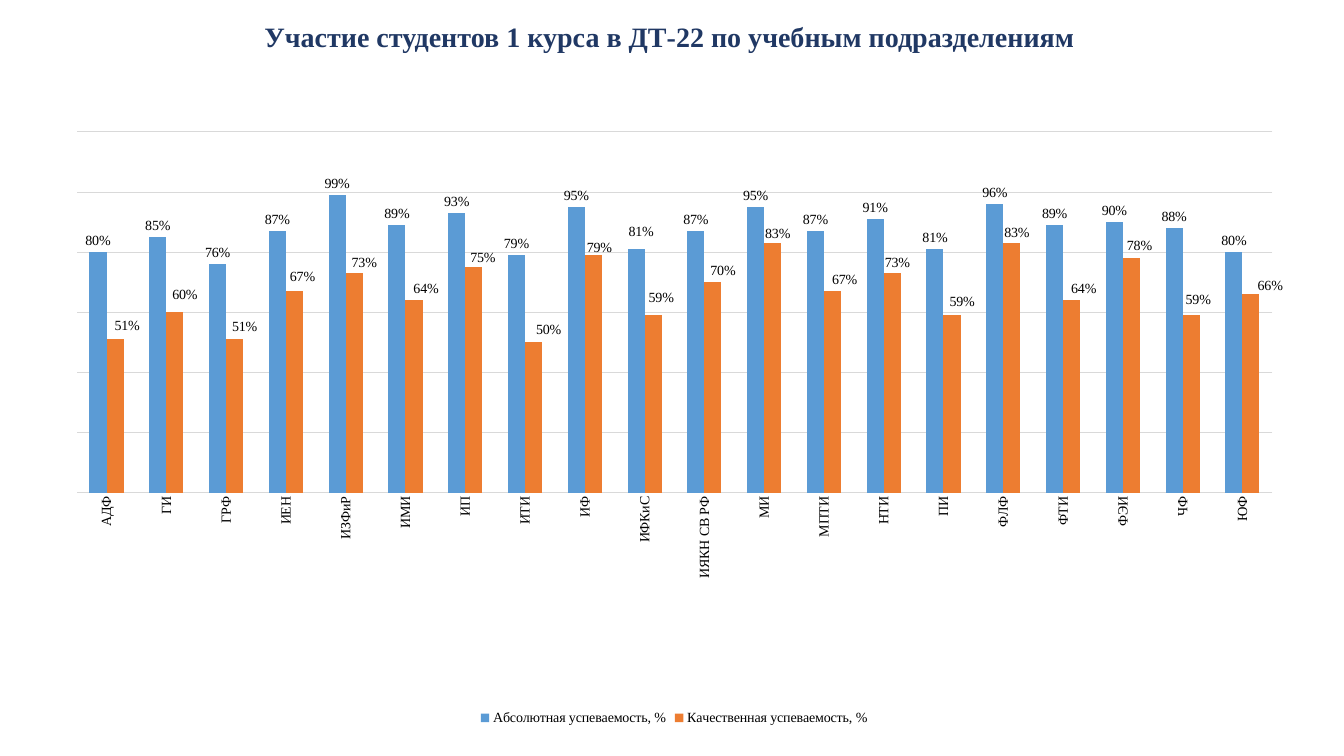
from pptx import Presentation
from pptx.chart.data import CategoryChartData
from pptx.dml.color import RGBColor
from pptx.enum.chart import XL_CHART_TYPE, XL_LABEL_POSITION, XL_LEGEND_POSITION, XL_TICK_MARK
from pptx.enum.text import MSO_ANCHOR, PP_ALIGN
from pptx.oxml import parse_xml
from pptx.oxml.ns import nsdecls
from pptx.util import Inches, Pt

FONT = "Times New Roman"
NAVY = RGBColor(0x20, 0x38, 0x64)
BLACK = RGBColor(0, 0, 0)
GRID = RGBColor(0xD9, 0xD9, 0xD9)
BLUE = RGBColor(0x5B, 0x9B, 0xD5)
ORANGE = RGBColor(0xED, 0x7D, 0x31)

CHART_W, CHART_H = 12.45, 6.32
PLOT = {"x": 0.3, "y": 0.39, "w": 11.86, "h": 3.58}

UNITS = ["АДФ", "ГИ", "ГРФ", "ИЕН", "ИЗФиР", "ИМИ", "ИП", "ИТИ", "ИФ", "ИФКиС",
         "ИЯКН СВ РФ", "МИ", "МПТИ", "НТИ", "ПИ", "ФЛФ", "ФТИ", "ФЭИ", "ЧФ", "ЮФ"]
ABSOLUTE = [80, 85, 76, 87, 99, 89, 93, 79, 95, 81, 87, 95, 87, 91, 81, 96, 89, 90, 88, 80]
QUALITY = [51, 60, 51, 67, 73, 64, 75, 50, 79, 59, 70, 83, 67, 73, 59, 83, 64, 78, 59, 66]

ABSOLUTE_SHIFTS = {9: (0.05, -0.06)}
QUALITY_SHIFTS = dict(enumerate([
    (0.12, -0.02), (0.1, -0.06), (0.1, -0.01), (0.08, -0.03), (0.1, 0.01),
    (0.12, 0), (0.09, 0.02), (0.15, -0.01), (0.06, 0.04), (0.08, -0.06),
    (0.1, 0), (0.05, 0.02), (0.12, 0), (0.05, 0.01), (0.1, -0.02),
    (0.05, 0.01), (0.12, 0), (0.08, -0.01), (0.07, -0.04), (0.19, 0.03)]))


def style_font(font, size=10, color=BLACK, bold=False):
    font.name = FONT
    font.size = Pt(size)
    font.bold = bold
    font.color.rgb = color


def manual_layout(x, y, w=None, h=None):
    parts = ""
    if w:
        parts += '<c:layoutTarget val="inner"/><c:xMode val="edge"/><c:yMode val="edge"/>'
    parts += f'<c:x val="{x / CHART_W:.4f}"/><c:y val="{y / CHART_H:.4f}"/>'
    if w:
        parts += f'<c:w val="{w / CHART_W:.4f}"/><c:h val="{h / CHART_H:.4f}"/>'
    return parse_xml(f'<c:layout {nsdecls("c")}><c:manualLayout>{parts}'
                     '</c:manualLayout></c:layout>')


def add_title(s, text):
    tf = s.shapes.add_textbox(Inches(0.89), Inches(0), Inches(11.5), Inches(0.76)).text_frame
    tf.word_wrap = True
    tf.vertical_anchor = MSO_ANCHOR.MIDDLE
    p = tf.paragraphs[0]
    p.text = text
    p.alignment = PP_ALIGN.CENTER
    p.line_spacing = 0.9
    style_font(p.runs[0].font, 20, NAVY, True)


def style_series(series, color, shifts):
    series.format.fill.solid()
    series.format.fill.fore_color.rgb = color
    series.invert_if_negative = False
    labels = series.data_labels
    labels.show_value = True
    labels.number_format = "0%"
    labels.number_format_is_linked = False
    labels.position = XL_LABEL_POSITION.OUTSIDE_END
    style_font(labels.font)
    for i, shift in shifts.items():
        label = series.points[i].data_label
        label.position = XL_LABEL_POSITION.OUTSIDE_END
        style_font(label.font)
        idx = series._element.xpath(f'c:dLbls/c:dLbl/c:idx[@val="{i}"]')[0]
        idx.addnext(parse_xml(f'<c:numFmt {nsdecls("c")} formatCode="0%" sourceLinked="0"/>'))
        idx.addnext(manual_layout(*shift))


def style_axes(chart):
    cat = chart.category_axis
    cat.major_tick_mark = XL_TICK_MARK.NONE
    cat.format.line.fill.background()
    style_font(cat.tick_labels.font)
    body = cat._element.xpath("c:txPr/a:bodyPr")[0]
    body.set("rot", "-5400000")
    body.set("vert", "horz")
    val = chart.value_axis
    val.visible = False
    val.minimum_scale, val.maximum_scale, val.major_unit = 0, 1.2, 0.2
    val.tick_labels.number_format = "0%"
    val.tick_labels.number_format_is_linked = False
    val.major_gridlines.format.line.color.rgb = GRID
    val.major_gridlines.format.line.width = Pt(0.75)


def add_results_chart(s):
    data = CategoryChartData(number_format="0%")
    data.categories = UNITS
    data.add_series("Абсолютная успеваемость, %", [v / 100 for v in ABSOLUTE])
    data.add_series("Качественная успеваемость, %", [v / 100 for v in QUALITY])
    chart = s.shapes.add_chart(XL_CHART_TYPE.COLUMN_CLUSTERED, Inches(0.46), Inches(0.92),
                               Inches(CHART_W), Inches(CHART_H), data).chart
    chart.has_title = False
    style_font(chart.font)
    chart.has_legend = True
    chart.legend.position = XL_LEGEND_POSITION.BOTTOM
    chart.legend.include_in_layout = False
    style_font(chart.legend.font)
    plot = chart.plots[0]
    plot.gap_width = 150
    plot.overlap = 0
    plot.vary_by_categories = False
    style_axes(chart)
    for series, color, shifts in zip(plot.series, (BLUE, ORANGE),
                                     (ABSOLUTE_SHIFTS, QUALITY_SHIFTS)):
        style_series(series, color, shifts)
    area = chart._chartSpace.xpath("c:chart/c:plotArea")[0]
    for layout in area.xpath("c:layout"):
        area.remove(layout)
    area.insert(0, manual_layout(**PLOT))


def main():
    prs = Presentation()
    prs.slide_width, prs.slide_height = Inches(13.33), Inches(7.5)
    s = prs.slides.add_slide(prs.slide_layouts[6])
    add_title(s, "Участие студентов 1 курса в ДТ-22 по учебным подразделениям")
    add_results_chart(s)
    prs.save("out.pptx")


if __name__ == "__main__":
    main()
